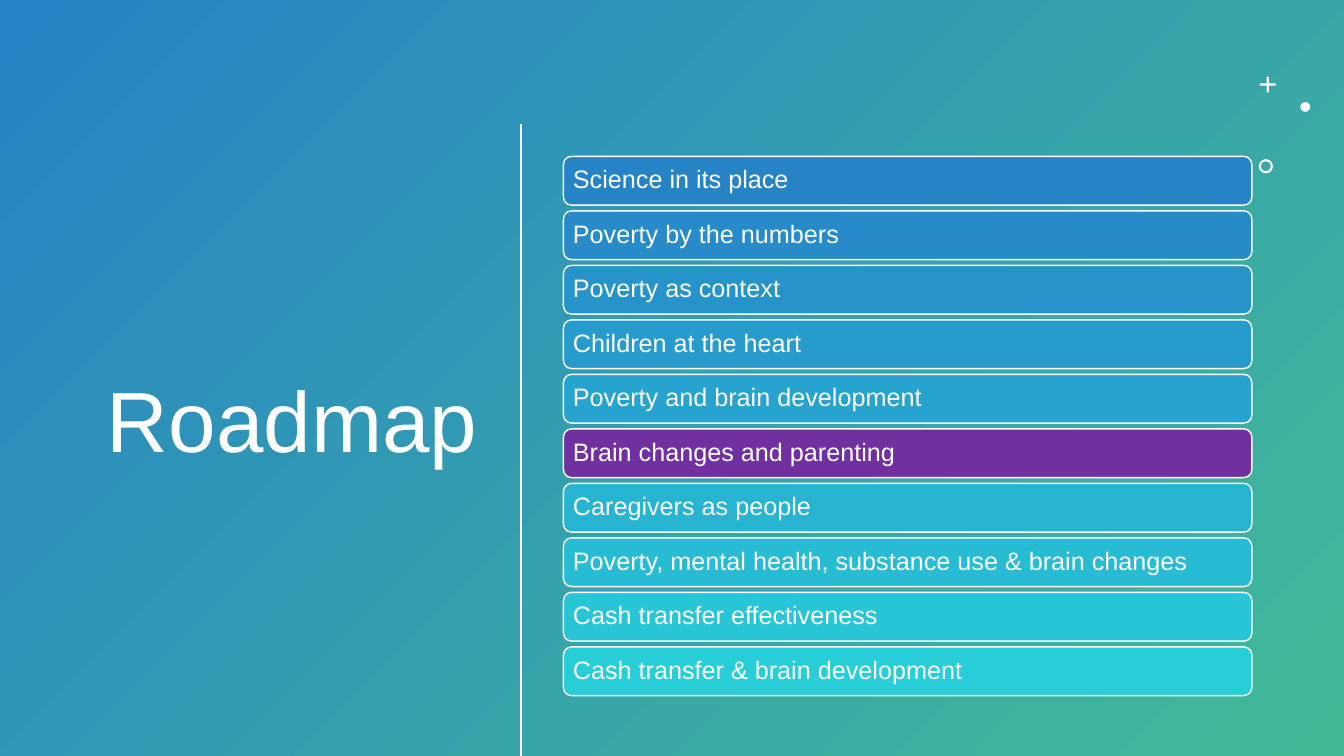
"""Build the Roadmap slide: a title beside ten stacked topic bars."""
from dataclasses import dataclass

from lxml.etree import SubElement
from pptx import Presentation
from pptx.dml.color import RGBColor
from pptx.enum.shapes import MSO_CONNECTOR, MSO_SHAPE
from pptx.enum.text import MSO_ANCHOR, PP_ALIGN
from pptx.oxml.ns import qn
from pptx.util import Cm, Pt


@dataclass(frozen=True)
class Theme:
    font: str = "Arial"
    title_size: int = 61
    topic_size: int = 18
    white: str = "FFFFFF"
    gradient: tuple = ("2683C6", "42BA97")
    bars: tuple = ("2683C6", "268BC8", "2693CA", "269BCC", "26A3CE",
                   "7030A0", "27B4D1", "27BCD3", "27C5D5", "27CED7")


theme = Theme()
white = RGBColor.from_string(theme.white)
topics = (
    "Science in its place",
    "Poverty by the numbers",
    "Poverty as context",
    "Children at the heart",
    "Poverty and brain development",
    "Brain changes and parenting",
    "Caregivers as people",
    "Poverty, mental health, substance use & brain changes",
    "Cash transfer effectiveness",
    "Cash transfer & brain development",
)

presentation = Presentation()
presentation.slide_width = Cm(33.87)
presentation.slide_height = Cm(19.05)
slide = presentation.slides.add_slide(presentation.slide_layouts[6])


def add_plain_shape(kind, left, top, width, height, color):
    shape = slide.shapes.add_shape(kind, Cm(left), Cm(top), Cm(width), Cm(height))
    shape.shadow.inherit = False
    shape.fill.solid()
    shape.fill.fore_color.rgb = RGBColor.from_string(color)
    shape.line.fill.background()
    return shape


def write_text(shape, text, size, alignment):
    frame = shape.text_frame
    frame.text = text
    frame.word_wrap = True
    frame.vertical_anchor = MSO_ANCHOR.MIDDLE
    paragraph = frame.paragraphs[0]
    paragraph.alignment = alignment
    paragraph.line_spacing = 0.9
    font = paragraph.runs[0].font
    font.name = theme.font
    font.size = Pt(size)
    font.color.rgb = white


backdrop = add_plain_shape(MSO_SHAPE.RECTANGLE, 0, 0, 33.87, 19.05, theme.gradient[0])
backdrop.fill.gradient()
backdrop.fill.gradient_angle = 315
for stop, color in zip(backdrop.fill.gradient_stops, theme.gradient):
    stop.color.rgb = RGBColor.from_string(color)

title = slide.shapes.add_textbox(Cm(1.32), Cm(2.95), Cm(10.95), Cm(15.52))
write_text(title, "Roadmap", theme.title_size, PP_ALIGN.RIGHT)

plus = add_plain_shape(MSO_SHAPE.CROSS, 31.75, 1.93, 0.4, 0.4, theme.white)
plus.adjustments[0] = 0.43
add_plain_shape(MSO_SHAPE.OVAL, 32.77, 2.57, 0.25, 0.25, theme.white)
ring = add_plain_shape(MSO_SHAPE.DONUT, 31.72, 4.01, 0.36, 0.36, theme.white)
ring.adjustments[0] = 0.15

divider = slide.shapes.add_connector(
    MSO_CONNECTOR.STRAIGHT, Cm(13.13), Cm(3.12), Cm(13.13), Cm(19.05))
divider.line.color.rgb = white
divider.line.width = Pt(2)
SubElement(divider.element.spPr, qn("a:effectLst"))

first_top, last_top = 3.94, 16.3
pitch = (last_top - first_top) / (len(topics) - 1)
for index, (topic, color) in enumerate(zip(topics, theme.bars)):
    bar = add_plain_shape(MSO_SHAPE.ROUNDED_RECTANGLE, 14.2,
                          first_top + index * pitch, 17.35, 1.23, color)
    bar.line.color.rgb = white
    bar.line.width = Pt(1)
    write_text(bar, topic, theme.topic_size, PP_ALIGN.LEFT)
    bar.text_frame.margin_left = bar.text_frame.margin_right = Cm(0.18)

presentation.save("out.pptx")
